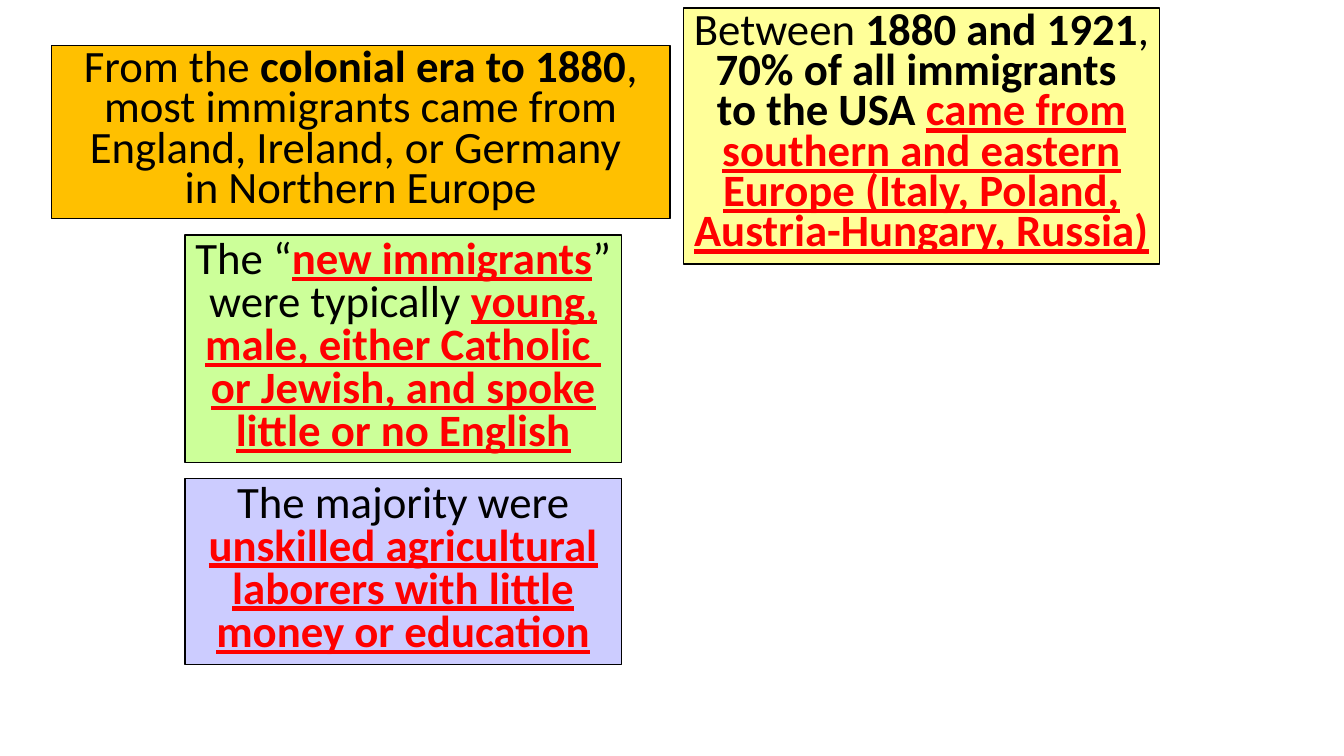
from pptx import Presentation
from pptx.dml.color import RGBColor
from pptx.enum.shapes import MSO_SHAPE
from pptx.enum.text import MSO_ANCHOR, MSO_AUTO_SIZE, PP_ALIGN
from pptx.util import Pt

BLACK = RGBColor(0x00, 0x00, 0x00)
RED = RGBColor(0xFF, 0x00, 0x00)
ORANGE = RGBColor(0xFF, 0xC0, 0x00)
YELLOW = RGBColor(0xFF, 0xFF, 0x99)
GREEN = RGBColor(0xCC, 0xFF, 0x99)
LAVENDER = RGBColor(0xCC, 0xCC, 0xFF)

PLAIN, BOLD, KEY = "plain", "bold", "key"

FACTS = [
    ((36.7, 32.4, 442, 123.8), ORANGE, 0.75, [
        ("From the ", PLAIN),
        ("colonial era to 1880", BOLD),
        (", most immigrants came from England, Ireland, or Germany \nin Northern Europe", PLAIN),
    ]),
    ((488.2, 5.8, 340, 182.9), YELLOW, 0.75, [
        ("Between ", PLAIN),
        ("1880 and 1921", BOLD),
        (", ", PLAIN),
        ("70% of all immigrants \nto the USA ", BOLD),
        ("came from southern and eastern Europe (Italy, Poland, Austria-Hungary, Russia) ", KEY),
    ]),
    ((132, 167.8, 312, 162.7), GREEN, 0.8, [
        ("The “", PLAIN),
        ("new immigrants", KEY),
        ("” were typically ", PLAIN),
        ("young, male, either Catholic \nor Jewish, and spoke little or no English", KEY),
    ]),
    ((132, 342, 312, 132.5), LAVENDER, 0.8, [
        ("The majority were ", PLAIN),
        ("unskilled agricultural laborers with little money or education", KEY),
    ]),
]


def add_phrase(paragraph, phrase, style):
    """Append a phrase in the given style, breaking lines at newlines."""
    for index, line in enumerate(phrase.split("\n")):
        if index:
            paragraph.add_line_break()
        run = paragraph.add_run()
        run.text = line
        run.font.name = "Calibri"
        run.font.size = Pt(32)
        run.font.bold = style != PLAIN
        run.font.underline = style == KEY
        run.font.color.rgb = RED if style == KEY else BLACK


def add_fact(slide, box, color, line_spacing, phrases):
    """Draw one outlined fact box with its centred statement."""
    fact = slide.shapes.add_shape(MSO_SHAPE.RECTANGLE, *map(Pt, box))
    fact.shadow.inherit = False
    fact.fill.solid()
    fact.fill.fore_color.rgb = color
    fact.line.color.rgb = BLACK
    fact.line.width = Pt(1)
    frame = fact.text_frame
    frame.word_wrap = True
    frame.auto_size = MSO_AUTO_SIZE.SHAPE_TO_FIT_TEXT
    frame.vertical_anchor = MSO_ANCHOR.TOP
    statement = frame.paragraphs[0]
    statement.alignment = PP_ALIGN.CENTER
    statement.line_spacing = line_spacing
    for phrase, style in phrases:
        add_phrase(statement, phrase, style)


def main():
    """Build the immigration slide and save it."""
    deck = Presentation()
    deck.slide_width, deck.slide_height = Pt(960), Pt(540)
    slide = deck.slides.add_slide(deck.slide_layouts[6])
    for fact in FACTS:
        add_fact(slide, *fact)
    deck.save("out.pptx")


if __name__ == "__main__":
    main()
